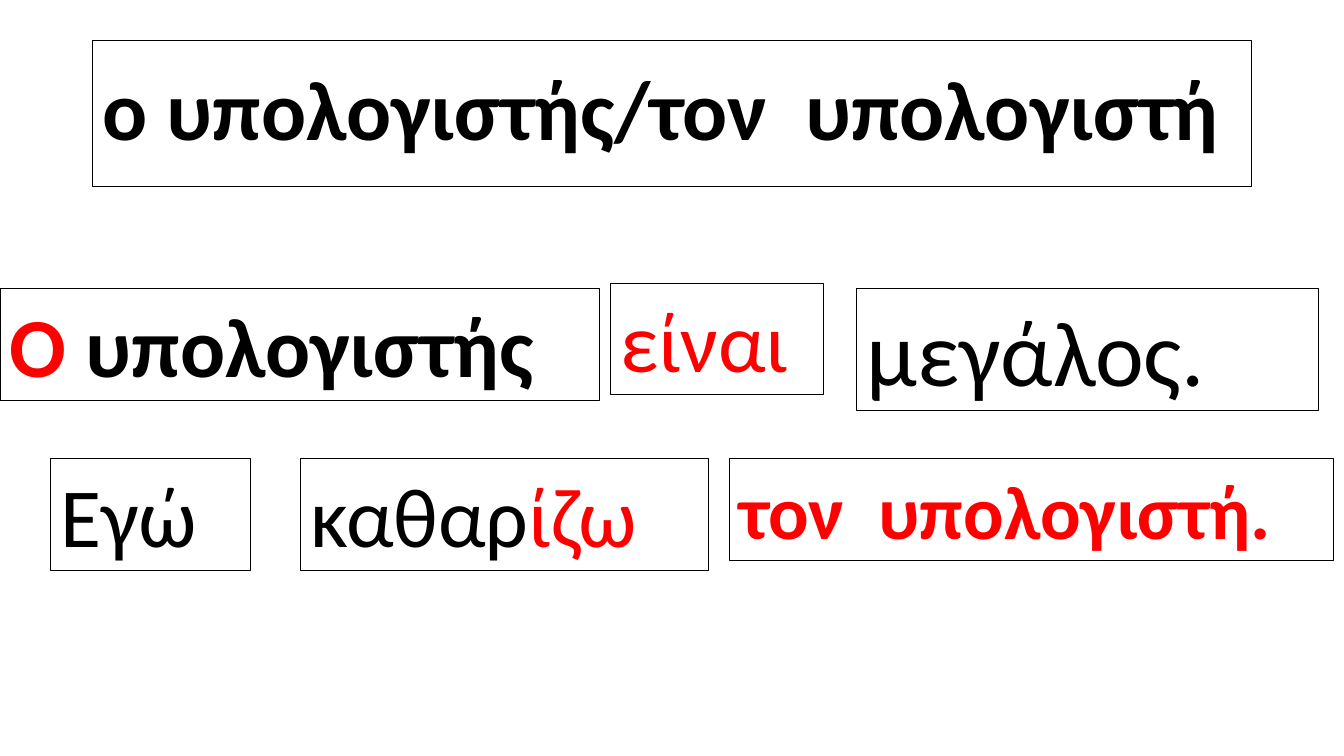
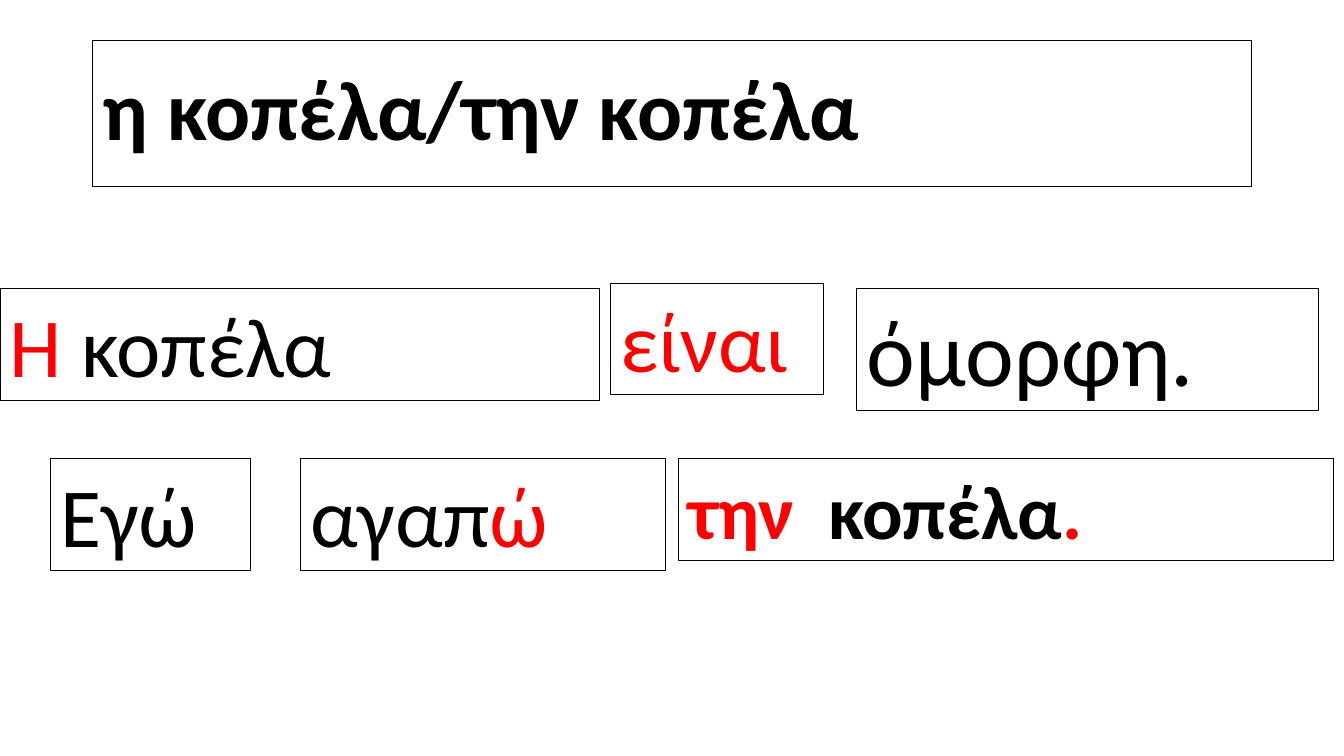
from pptx import Presentation
from pptx.dml.color import RGBColor
from pptx.enum.text import MSO_ANCHOR, MSO_AUTO_SIZE, PP_ALIGN
from pptx.util import Inches, Pt

BLACK = RGBColor(0x00, 0x00, 0x00)
RED = RGBColor(0xFF, 0x00, 0x00)
FONT = "Calibri"

# Grid of 160 columns by 90 rows, on square cells
CELL = Inches(1) // 12
COLUMNS, ROWS = 160, 90
TITLE_ONLY = 5

# Rows and edges that both slides share
SUBJECT_ROW, VERB_ROW, OBJECT_ROW = 34.4, 33.7, 54.6
OBJECT_RIGHT = 158.7


def cells(count):
    return round(count * CELL)


def place(box, left, top, width, height):
    box.left, box.top = cells(left), cells(top)
    box.width, box.height = cells(width), cells(height)


def outline(box):
    box.line.color.rgb = BLACK
    box.line.width = Pt(0.75)


def add_span(para, text, *, size=60, color=BLACK, bold=False):
    span = para.add_run()
    span.text = text
    span.font.name = FONT
    span.font.size = Pt(size)
    span.font.bold = bold
    span.font.color.rgb = color


def set_title(page, text):
    box = page.shapes.title
    place(box, 11, 4.8, 138, 17.4)
    outline(box)
    frame = box.text_frame
    frame.auto_size = MSO_AUTO_SIZE.NONE
    frame.vertical_anchor = MSO_ANCHOR.MIDDLE
    para = frame.paragraphs[0]
    para.alignment = PP_ALIGN.LEFT
    para.line_spacing = 0.9
    add_span(para, text, bold=True)


def add_word(page, left, top, width, spans, *, size=60, bold=False):
    """Add an outlined word box, one line high; spans are (text, colour) pairs."""
    box = page.shapes.add_textbox(0, 0, 0, 0)
    place(box, left, top, width, size / 5 + 1.3)
    outline(box)
    frame = box.text_frame
    frame.word_wrap = True
    frame.auto_size = MSO_AUTO_SIZE.SHAPE_TO_FIT_TEXT
    for text, color in spans:
        add_span(frame.paragraphs[0], text, size=size, color=color, bold=bold)


def add_lesson(deck, title, *, subject, adjective, verb, verb_width,
               target, target_left, subject_bold=False):
    page = deck.slides.add_slide(deck.slide_layouts[TITLE_ONLY])
    set_title(page, title)

    # First sentence: the noun as subject
    add_word(page, 0, SUBJECT_ROW, 71.4, subject, bold=subject_bold)
    add_word(page, 72.7, VERB_ROW, 25.3, [("είναι", RED)])
    add_word(page, 102, SUBJECT_ROW, 55, [(adjective, BLACK)], size=66)

    # Second sentence: the noun as object
    add_word(page, 6, OBJECT_ROW, 23.8, [("Εγώ", BLACK)])
    add_word(page, 35.8, OBJECT_ROW, verb_width, verb)
    add_word(page, target_left, OBJECT_ROW, OBJECT_RIGHT - target_left,
             target, size=54, bold=True)


def main():
    deck = Presentation()
    deck.slide_width, deck.slide_height = cells(COLUMNS), cells(ROWS)

    add_lesson(
        deck, "ο υπολογιστής/τον  υπολογιστή",
        subject=[("Ο", RED), (" υπολογιστής", BLACK)], subject_bold=True,
        adjective="μεγάλος.",
        verb=[("καθαρ", BLACK), ("ίζω", RED)], verb_width=48.6,
        target=[("τον  υπολογιστή.", RED)], target_left=86.8,
    )
    add_lesson(
        deck, "η κοπέλα/την κοπέλα",
        subject=[("Η", RED), (" κοπέλα", BLACK)],
        adjective="όμορφη.",
        verb=[("αγαπ", BLACK), ("ώ", RED)], verb_width=43.4,
        target=[("την  ", RED), ("κοπέλα", BLACK), (".", RED)], target_left=80.8,
    )
    deck.save("out.pptx")


if __name__ == "__main__":
    main()
